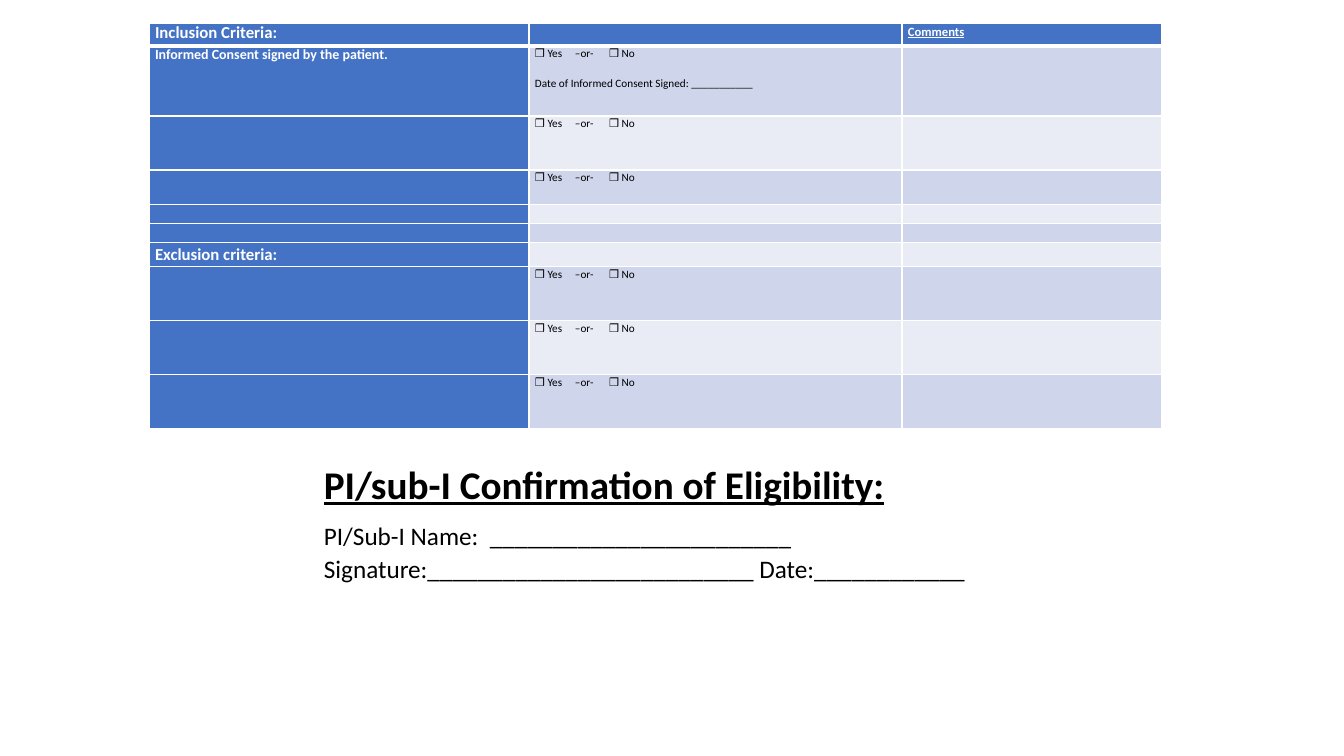
from lxml.etree import SubElement
from pptx import Presentation
from pptx.dml.color import RGBColor
from pptx.enum.text import MSO_AUTO_SIZE as AutoSize
from pptx.oxml.ns import qn
from pptx.util import Pt

EMU_PER_PX = 914400 / 100.8
BLUE, BAND_DARK, BAND_LIGHT = "4472C4", "CFD5EA", "E9EBF5"
WHITE, BLACK = "FFFFFF", "000000"
CHOICE = "❒ Yes\t–or-\t❒ No"
CHOICE_TABS = (40, 74)

COLUMNS = (380, 373, 260)
ROWS = (23, 70, 54, 35, 19, 19, 24, 54, 54, 54)
CHOICE_ROWS = (1, 2, 3, 7, 8, 9)


def px(length):
    return round(length * EMU_PER_PX)


def color(code):
    return RGBColor.from_string(code)


class FormPage:
    def __init__(self, deck, font="Calibri"):
        self.page = deck.slides.add_slide(deck.slide_layouts[6])
        self.font = font

    def put_text(self, frame, text, size, ink=BLACK, bold=False, underline=False,
                 spacing=1.07, before=0, after=0, tabs=()):
        """Fill the frame's empty first paragraph, or add one after the last."""
        para = frame.paragraphs[-1]
        if para.runs:
            para = frame.add_paragraph()
        para.text = text
        para.line_spacing = spacing
        para.space_before, para.space_after = Pt(before), Pt(after)
        if tabs:
            tab_list = SubElement(para._p.get_or_add_pPr(), qn("a:tabLst"))
            for stop in tabs:
                SubElement(tab_list, qn("a:tab"), pos=str(px(stop)), algn="l")
        font = para.font
        font.name, font.size = self.font, Pt(size)
        font.bold, font.underline = bold, underline
        font.color.rgb = color(ink)

    def border(self, cell, **widths):
        """Draw white cell edges; widths in points, keyed L, R, T, B."""
        for side, width in widths.items():
            line = SubElement(cell._tc.get_or_add_tcPr(), qn(f"a:ln{side}"), w=str(Pt(width)))
            fill = SubElement(line, qn("a:solidFill"))
            SubElement(fill, qn("a:srgbClr"), val=WHITE)

    def table(self, left, top, columns, rows):
        table = self.page.shapes.add_table(
            len(rows), len(columns), px(left), px(top), px(sum(columns)), px(sum(rows))).table
        table.first_col = True
        for column, width in zip(table.columns, columns):
            column.width = px(width)
        for r, height in enumerate(rows):
            table.rows[r].height = px(height)
            for c in range(len(columns)):
                cell = table.cell(r, c)
                cell.margin_left = cell.margin_right = px(6)
                cell.margin_top = cell.margin_bottom = 0
                self.border(cell, L=1, R=1, T=3 if r == 1 else 1, B=3 if r == 0 else 1)
                band = BAND_DARK if r % 2 else BAND_LIGHT
                cell.fill.solid()
                cell.fill.fore_color.rgb = color(BLUE if r == 0 or c == 0 else band)
                # A small end mark keeps empty cells from stretching low rows.
                SubElement(cell.text_frame.paragraphs[0]._p, qn("a:endParaRPr"), sz="800")
        return table

    def text_box(self, left, top, width, height):
        box = self.page.shapes.add_textbox(px(left), px(top), px(width), px(height))
        frame = box.text_frame
        frame.word_wrap = True
        frame.auto_size = AutoSize.SHAPE_TO_FIT_TEXT
        return frame

    def criteria(self):
        table = self.table(149, 23, COLUMNS, ROWS)

        def fill_in(row, column, text, **style):
            self.put_text(table.cell(row, column).text_frame, text, **style)

        label = {"ink": WHITE, "bold": True}
        fill_in(0, 0, "Inclusion Criteria:", size=12, spacing=1.0, **label)
        fill_in(0, 2, "Comments", size=9, underline=True, **label)
        fill_in(1, 0, "Informed Consent signed by the patient.", size=10, spacing=1.0, **label)
        fill_in(6, 0, "Exclusion criteria:", size=12, **label)
        for row in CHOICE_ROWS:
            fill_in(row, 1, CHOICE, size=8, tabs=CHOICE_TABS)
        fill_in(1, 1, "Date of Informed Consent Signed: ___________", size=8, before=11)

    def confirmation(self):
        frame = self.text_box(314, 452, 663, 169)
        self.put_text(frame, "PI/sub-I Confirmation of Eligibility:",
                      size=28, bold=True, underline=True, after=8)
        self.put_text(frame, "PI/Sub-I Name:\t________________________\v"
                      "Signature:__________________________ Date:____________",
                      size=18, after=8, tabs=(166,))


def main():
    deck = Presentation()
    deck.slide_width, deck.slide_height = px(1344), px(756)
    form = FormPage(deck)
    form.criteria()
    form.confirmation()
    deck.save("out.pptx")


if __name__ == "__main__":
    main()
